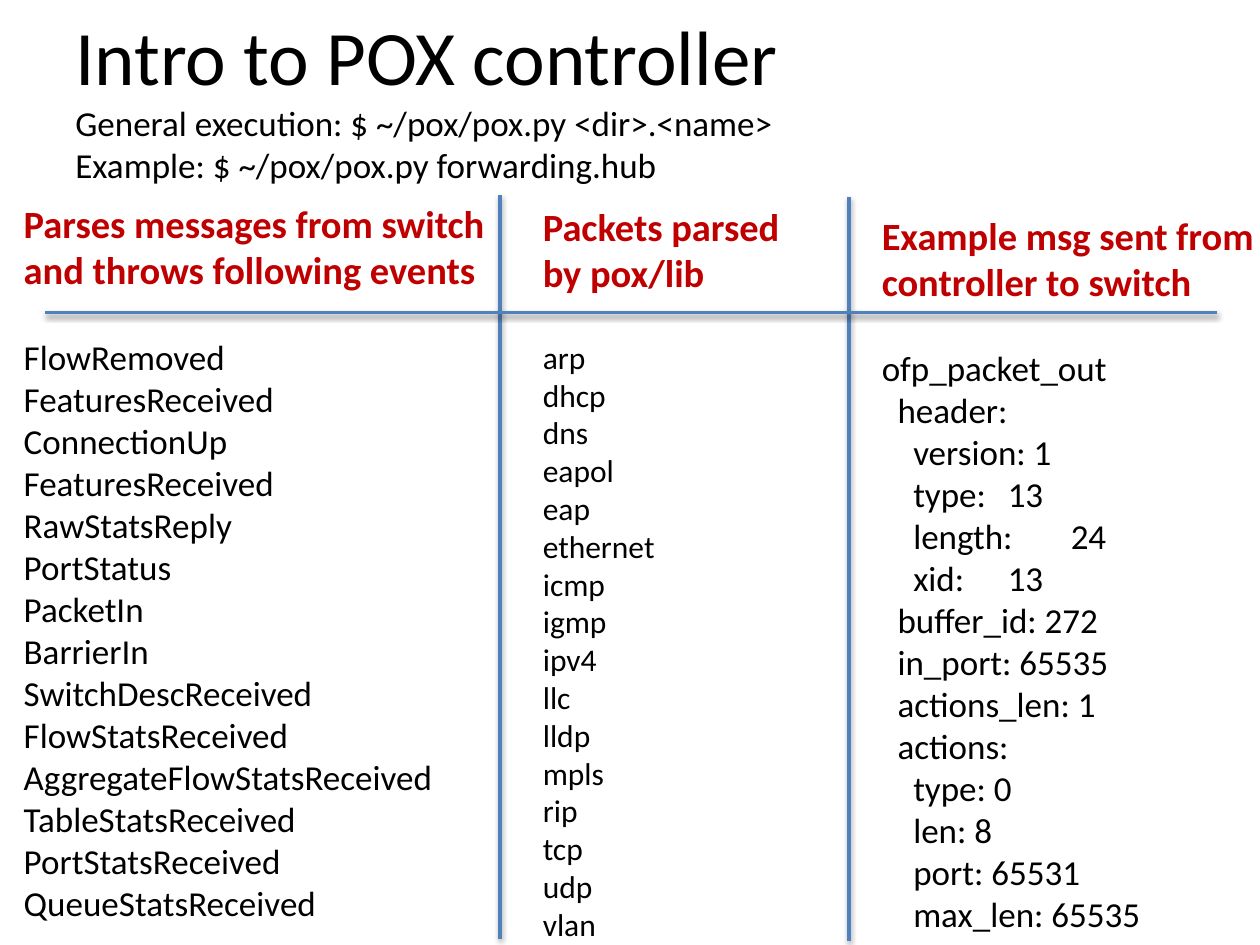
from lxml.etree import SubElement as Sub
from pptx import Presentation
from pptx.dml.color import RGBColor as Color
from pptx.enum.shapes import MSO_CONNECTOR as Link
from pptx.enum.text import MSO_ANCHOR as Anchor
from pptx.oxml.ns import qn
from pptx.util import Inches, Pt

THEME = {
    "title": {"size": Pt(44), "bold": False, "rgb": "000000"},
    "body": {"size": Pt(20), "bold": False, "rgb": "000000"},
    "small": {"size": Pt(18), "bold": False, "rgb": "000000"},
    "head": {"size": Pt(22), "bold": True, "rgb": "C00000"},
    "font": "Calibri",
    "rule": "4F81BD",
    "shade": "000000",
}
UNIT = Inches(0.1)   # the slide is a grid of 100 columns by 75 rows
STEP = 1.25          # columns per indent level
GAP = Pt(24.4)       # one body line between heading and list

deck = Presentation()
deck.slide_width, deck.slide_height = 100 * UNIT, 75 * UNIT
slide = deck.slides.add_slide(deck.slide_layouts[6])


def add_box(*area):
    box = slide.shapes.add_textbox(*(int(n * UNIT) for n in area))
    box.text_frame.word_wrap = True
    return box.text_frame


def add_run(para, text, look):
    run = para.add_run()
    run.text = text
    run.font.name = THEME["font"]
    for key, val in THEME[look].items():
        if key == "rgb":
            run.font.color.rgb = Color.from_string(val)
        else:
            setattr(run.font, key, val)


# Title with the two command lines
frame = add_box(5, 2.7, 90, 10)
frame.vertical_anchor = Anchor.MIDDLE
para = frame.paragraphs[0]
add_run(para, "Intro to POX controller", "title")
for text in ("General execution: $ ~/pox/pox.py <dir>.<name>",
             "Example: $ ~/pox/pox.py forwarding.hub"):
    para.add_line_break()
    add_run(para, text, "body")

# Lists: each item is its indent level, text and tab stop in columns
events = """FlowRemoved FeaturesReceived ConnectionUp FeaturesReceived
RawStatsReply PortStatus PacketIn BarrierIn SwitchDescReceived
FlowStatsReceived AggregateFlowStatsReceived TableStatsReceived
PortStatsReceived QueueStatsReceived""".split()
packets = """arp dhcp dns eapol eap ethernet icmp igmp ipv4 llc lldp mpls
rip tcp udp vlan""".split()
message = [
    (0, "ofp_packet_out", 0),
    (1, "header:", 0),
    (2, "version: 1", 0),
    (2, "type:\t13", 10.8),
    (2, "length:\t24", 11.6),
    (2, "xid:\t13", 9.7),
    (1, "buffer_id: 272", 0),
    (1, "in_port: 65535", 0),
    (1, "actions_len: 1", 0),
    (1, "actions:", 0),
    (2, "type: 0", 0),
    (2, "len: 8", 0),
    (2, "port: 65531", 0),
    (2, "max_len: 65535", 0),
]
lists = [
    ((0.9, 15.4, 40.3, 58.9), "body",
     "Parses messages from switch and throws following events",
     [(0, name, 0) for name in events]),
    ((42.1, 15.6, 23.8, 60.2), "small", "Packets parsed by pox/lib",
     [(0, name, 0) for name in packets]),
    ((69, 16.3, 32, 58.9), "body",
     "Example msg sent from controller to switch", message),
]
for area, look, head, items in lists:
    frame = add_box(*area)
    add_run(frame.paragraphs[0], head, "head")
    for row, (level, text, stop) in enumerate(items):
        para = frame.add_paragraph()
        add_run(para, text, look)
        if row == 0:
            para.space_before = GAP
        props = para._p.get_or_add_pPr()
        if level:
            props.set("marL", "0")
            props.set("indent", str(int(level * STEP * UNIT)))
        if stop:
            tabs = Sub(props, qn("a:tabLst"))
            Sub(tabs, qn("a:tab"), pos=str(int(stop * UNIT)), algn="l")

# Rules between the columns and below the headings
for ends in ((39.7, 15.5, 39.7, 74.5),
             (67.4, 15.6, 67.4, 74.7),
             (3.6, 24.8, 96.6, 24.8)):
    rule = slide.shapes.add_connector(
        Link.STRAIGHT, *(int(n * UNIT) for n in ends))
    rule.line.width = Pt(2)
    rule.line.color.rgb = Color.from_string(THEME["rule"])
    effect = Sub(rule._element.spPr, qn("a:effectLst"))
    shadow = Sub(effect, qn("a:outerShdw"), blurRad=str(Pt(3.1)),
                 dist=str(Pt(1.6)), dir="5400000", rotWithShape="0")
    shade = Sub(shadow, qn("a:srgbClr"), val=THEME["shade"])
    Sub(shade, qn("a:alpha"), val="38000")

deck.save("out.pptx")
